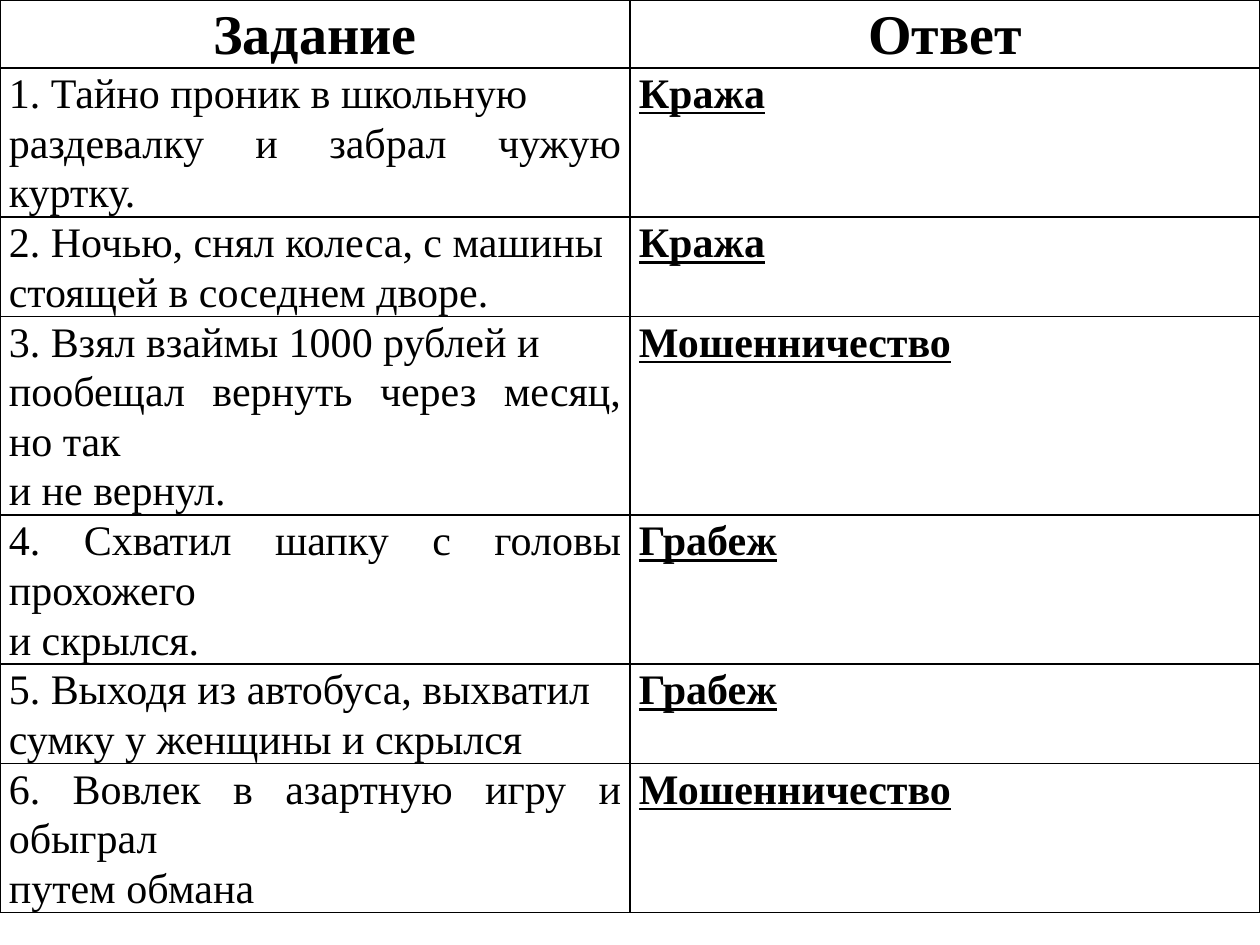
"""Build a slide with a table of offences and their legal names."""
from dataclasses import dataclass

from lxml.etree import SubElement
from pptx import Presentation
from pptx.dml.color import RGBColor
from pptx.enum.text import PP_ALIGN as Align
from pptx.oxml.ns import qn
from pptx.table import _Cell as Cell
from pptx.util import Inches, Pt


@dataclass(frozen=True)
class Theme:
    """Colours, font and sizes of the slide."""
    ink: str = "000000"
    font: str = "Times New Roman"
    heading_size: int = 32
    body_size: int = 24
    line_spacing: float = 1.07
    border_width: int = 1


@dataclass(frozen=True)
class Case:
    """One task with its answer and row height in inches."""
    task: str
    answer: str
    height: float


THEME = Theme()
HEADINGS = ("Задание", "Ответ")
HEADING_HEIGHT = 0.54
CASES = (
    Case("1. Тайно проник в школьную\nраздевалку и забрал чужую куртку.", "Кража", 0.69),
    Case("2. Ночью, снял колеса, с машины\nстоящей в соседнем дворе.", "Кража", 0.73),
    Case("3. Взял взаймы 1000 рублей и\nпообещал вернуть через месяц, но так\nи не вернул.",
         "Мошенничество", 0.99),
    Case("4. Схватил шапку с головы прохожего\nи скрылся.", "Грабеж", 0.65),
    Case("5. Выходя из автобуса, выхватил\nсумку у женщины и скрылся", "Грабеж", 0.76),
    Case("6. Вовлек в азартную игру и обыграл\nпутем обмана", "Мошенничество", 1.07),
)


def draw_borders(cell: Cell) -> None:
    """Give all four sides of a cell a solid line."""
    properties = cell._tc.get_or_add_tcPr()
    for position, side in enumerate(("a:lnL", "a:lnR", "a:lnT", "a:lnB")):
        line = properties.makeelement(qn(side), {"w": str(Pt(THEME.border_width))})
        fill = SubElement(line, qn("a:solidFill"))
        SubElement(fill, qn("a:srgbClr"), val=THEME.ink)
        properties.insert(position, line)


def write_cell(cell: Cell, text: str, *, size: int = THEME.body_size, bold: bool = False,
               underline: bool = False, align: Align = Align.JUSTIFY) -> None:
    """Fill a cell with formatted text, one paragraph for each line."""
    cell.fill.background()
    draw_borders(cell)
    cell.margin_left = cell.margin_right = Inches(0.07)
    cell.margin_top = cell.margin_bottom = Inches(0)
    cell.text_frame.text = text
    for paragraph in cell.text_frame.paragraphs:
        paragraph.alignment = align
        paragraph.line_spacing = THEME.line_spacing
        for run in paragraph.runs:
            run.font.name = THEME.font
            run.font.size = Pt(size)
            run.font.bold = bold
            run.font.underline = underline
            run.font.color.rgb = RGBColor.from_string(THEME.ink)


def main() -> None:
    """Create the presentation and save it."""
    presentation = Presentation()
    presentation.slide_width, presentation.slide_height = Inches(10), Inches(7.5)
    slide = presentation.slides.add_slide(presentation.slide_layouts[6])
    heights = [HEADING_HEIGHT, *(case.height for case in CASES)]
    table = slide.shapes.add_table(len(heights), len(HEADINGS), Inches(0), Inches(0),
                                   Inches(10), Inches(sum(heights))).table
    table.horz_banding = False
    for row, height in zip(table.rows, heights):
        row.height = Inches(height)
    for column, heading in enumerate(HEADINGS):
        write_cell(table.cell(0, column), heading, size=THEME.heading_size, bold=True,
                   align=Align.CENTER)
    for row, case in enumerate(CASES, start=1):
        write_cell(table.cell(row, 0), case.task)
        write_cell(table.cell(row, 1), case.answer, bold=True, underline=True)
    presentation.save("out.pptx")


if __name__ == "__main__":
    main()
